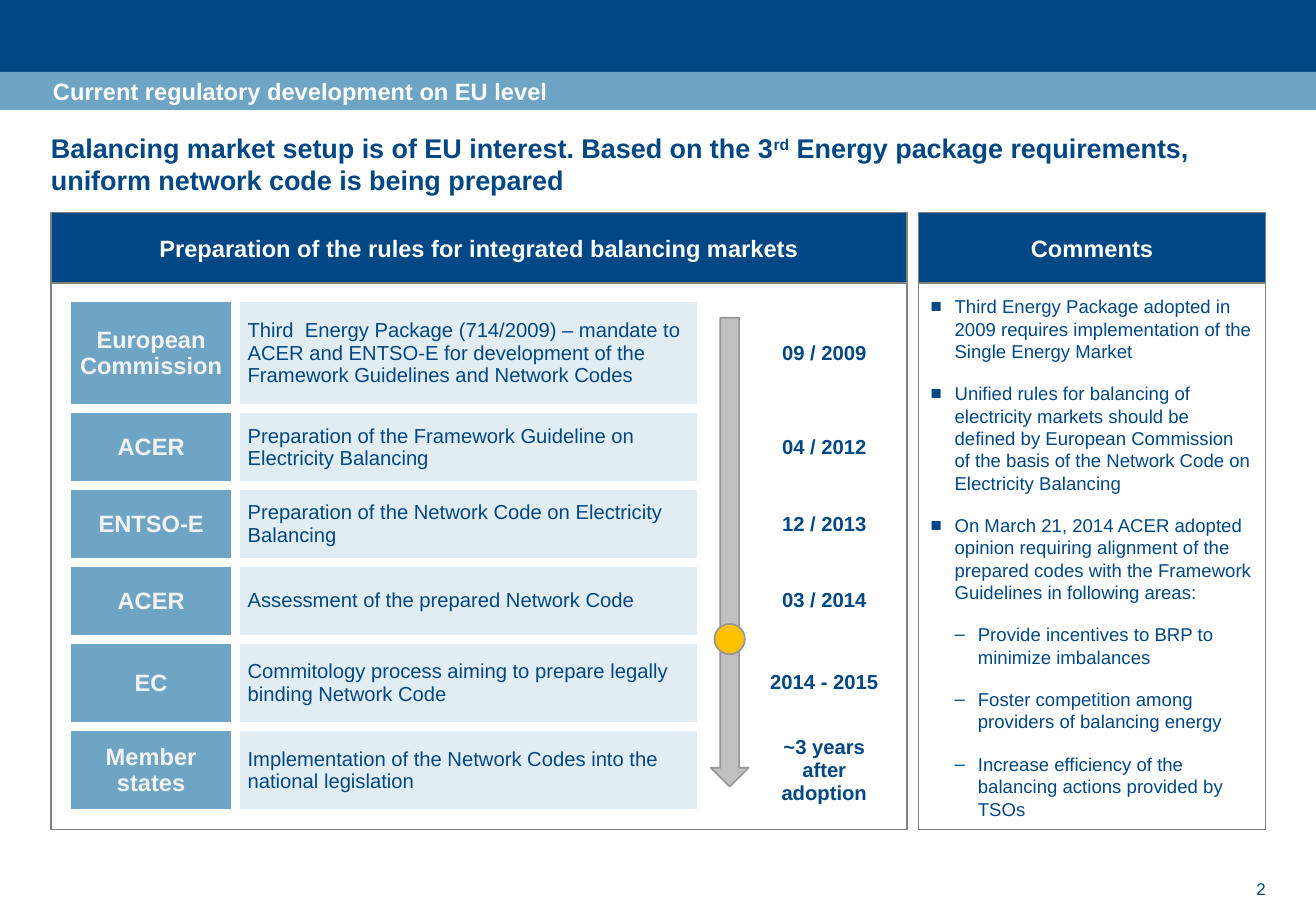
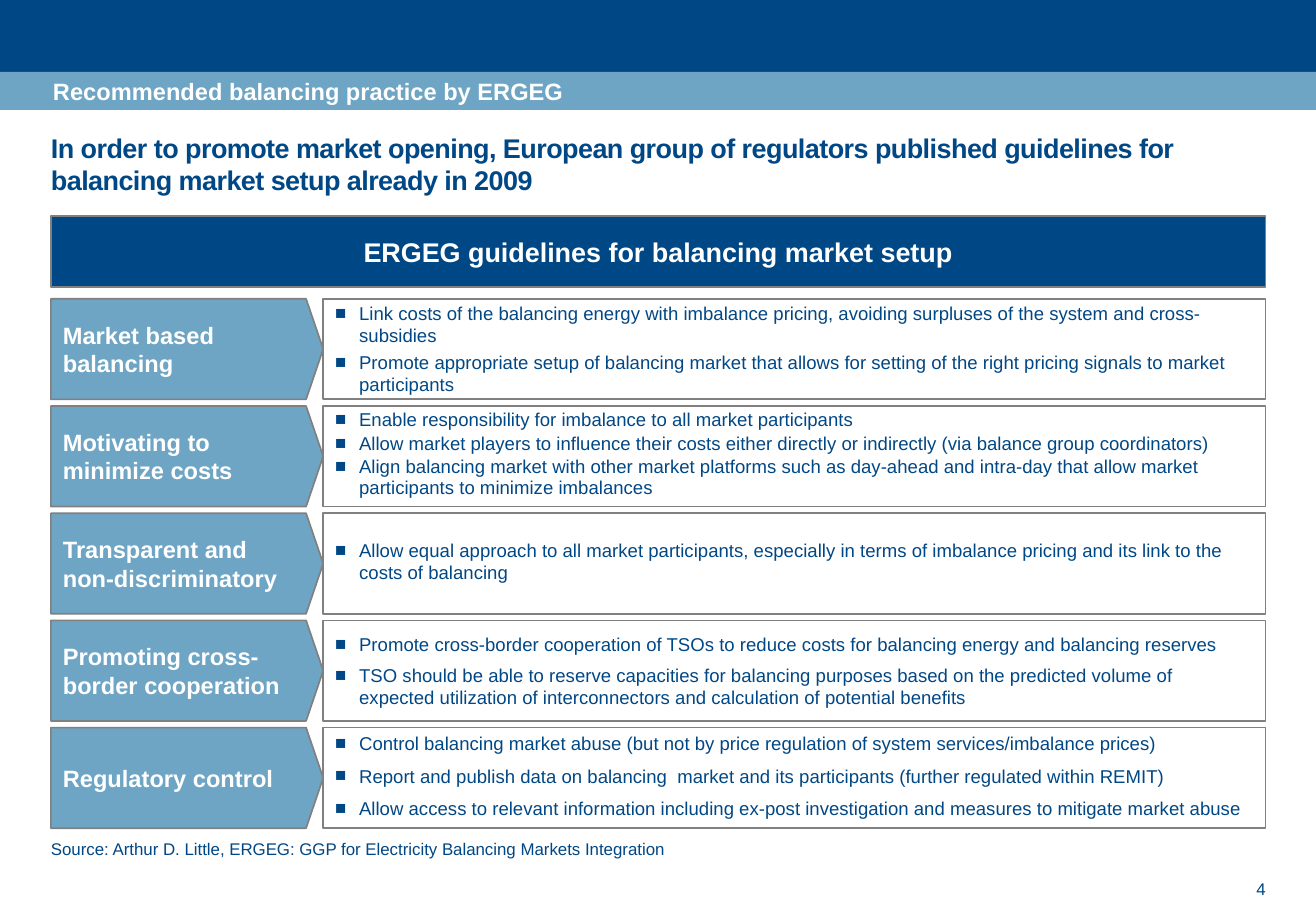
"""Build two slides on the regulation of electricity balancing markets."""
from dataclasses import dataclass
from typing import Optional

from lxml.etree import SubElement
from pptx import Presentation
from pptx.dml.color import RGBColor
from pptx.enum.shapes import MSO_SHAPE
from pptx.enum.text import MSO_ANCHOR, MSO_AUTO_SIZE, PP_ALIGN
from pptx.oxml import parse_xml
from pptx.oxml.ns import nsdecls, qn
from pptx.util import Pt


@dataclass(frozen=True)
class Theme:
    font: str = "Arial"
    navy: str = "004785"
    steel: str = "6EA5C4"
    pale: str = "E2EDF3"
    white: str = "FFFFFF"
    off_white: str = "F2F2F2"
    border: str = "808080"
    arrow_fill: str = "C0C0C0"
    arrow_line: str = "969696"
    marker: str = "FFC000"
    headline: int = 16
    heading: int = 14
    cell: int = 12
    bullet: int = 11
    small: int = 10


THEME = Theme()


@dataclass(frozen=True)
class Box:
    left: float
    top: float
    width: float
    height: float

    def lengths(self) -> tuple:
        return Pt(self.left), Pt(self.top), Pt(self.width), Pt(self.height)


@dataclass(frozen=True)
class Style:
    size: int
    color: str = THEME.navy
    bold: bool = False
    align: PP_ALIGN = PP_ALIGN.LEFT


@dataclass(frozen=True)
class Spacing:
    before: float = 0
    after: float = 0
    line: Optional[float] = None


@dataclass(frozen=True)
class Bullet:
    text: str
    level: int = 0


@dataclass(frozen=True)
class Milestone:
    body: str
    task: str
    date: str
    height: float


@dataclass(frozen=True)
class Guideline:
    name: str
    points: tuple
    spacing: Spacing
    top_inset: float = 4.5


LEFT, WIDTH, HEADER_HEIGHT = 30.2, 720, 41.8
HEADING = Style(THEME.heading, THEME.white, True, PP_ALIGN.CENTER)
LABEL = Style(THEME.heading, THEME.white, True)
BULLET = Style(THEME.bullet)
BULLET_MARKS = (("■", 14.2, -14.2), ("–", 28, -13.8))

MILESTONES = (
    Milestone("European Commission",
              "Third  Energy Package (714/2009) – mandate to ACER and ENTSO-E for "
              "development of the Framework Guidelines and Network Codes", "09 / 2009", 66.2),
    Milestone("ACER", "Preparation of the Framework Guideline on Electricity Balancing",
              "04 / 2012", 45.5),
    Milestone("ENTSO-E", "Preparation of the Network Code on Electricity Balancing",
              "12 / 2013", 45.5),
    Milestone("ACER", "Assessment of the prepared Network Code", "03 / 2014", 45.5),
    Milestone("EC", "Commitology process aiming to prepare legally binding Network Code",
              "2014 - 2015", 51.8),
    Milestone("Member states", "Implementation of the Network Codes into the national legislation",
              "~3 years after adoption", 51.8),
)

COMMENTS = (
    Bullet("Third Energy Package adopted in 2009 requires implementation of the Single Energy Market"),
    Bullet("Unified rules for balancing of electricity markets should be defined by European "
           "Commission of the basis of the Network Code on Electricity Balancing"),
    Bullet("On March 21, 2014 ACER adopted opinion requiring alignment of the prepared codes "
           "with the Framework Guidelines in following areas:"),
    Bullet("Provide incentives to BRP to minimize imbalances", 1),
    Bullet("Foster competition among providers of balancing energy", 1),
    Bullet("Increase efficiency of the balancing actions provided by TSOs", 1),
)

GUIDELINES = (
    Guideline("Market based balancing", (
        Bullet("Link costs of the balancing energy with imbalance pricing, avoiding surpluses "
               "of the system and cross-subsidies"),
        Bullet("Promote appropriate setup of balancing market that allows for setting of the "
               "right pricing signals to market participants"),
    ), Spacing(before=3, line=13), 7.2),
    Guideline("Motivating to minimize costs", (
        Bullet("Enable responsibility for imbalance to all market participants"),
        Bullet("Allow market players to influence their costs either directly or indirectly "
               "(via balance group coordinators)"),
        Bullet("Align balancing market with other market platforms such as day-ahead and "
               "intra-day that allow market participants to minimize imbalances"),
    ), Spacing(after=2, line=12)),
    Guideline("Transparent and non-discriminatory", (
        Bullet("Allow equal approach to all market participants, especially in terms of "
               "imbalance pricing and its link to the costs of balancing"),
    ), Spacing()),
    Guideline("Promoting cross-border cooperation", (
        Bullet("Promote cross-border cooperation of TSOs to reduce costs for balancing energy "
               "and balancing reserves"),
        Bullet("TSO should be able to reserve capacities for balancing purposes based on the "
               "predicted volume of expected utilization of interconnectors and calculation of "
               "potential benefits"),
    ), Spacing(before=5), 7.2),
    Guideline("Regulatory control", (
        Bullet("Control balancing market abuse (but not by price regulation of system "
               "services/imbalance prices)"),
        Bullet("Report and publish data on balancing  market and its participants (further "
               "regulated within REMIT)"),
        Bullet("Allow access to relevant information including ex-post investigation and "
               "measures to mitigate market abuse"),
    ), Spacing(after=6)),
)


def format_paragraph(paragraph, style: Style) -> None:
    paragraph.alignment = style.align
    for run in paragraph.runs:
        run.font.name = THEME.font
        run.font.size = Pt(style.size)
        run.font.bold = style.bold
        run.font.color.rgb = RGBColor.from_string(style.color)


def set_frame(text_frame, anchor=MSO_ANCHOR.TOP, insets=(0, 0, 0, 0), wrap: bool = True) -> None:
    text_frame.auto_size = MSO_AUTO_SIZE.NONE
    text_frame.word_wrap = wrap
    text_frame.vertical_anchor = anchor
    (text_frame.margin_left, text_frame.margin_top,
     text_frame.margin_right, text_frame.margin_bottom) = map(Pt, insets)


def place(shape, box: Box) -> None:
    shape.left, shape.top, shape.width, shape.height = box.lengths()


def outline(shape, color: str) -> None:
    shape.line.color.rgb = RGBColor.from_string(color)
    shape.line.width = Pt(1)


def add_box(slide, box: Box, fill: Optional[str] = None, line: Optional[str] = THEME.border,
            kind=MSO_SHAPE.RECTANGLE):
    shape = slide.shapes.add_shape(kind, *box.lengths())
    shape.shadow.inherit = False
    if fill:
        shape.fill.solid()
        shape.fill.fore_color.rgb = RGBColor.from_string(fill)
    else:
        shape.fill.background()
    if line:
        outline(shape, line)
    else:
        shape.line.fill.background()
    return shape


def add_label(slide, box: Box, text: str, style: Style, fill: str,
              kind=MSO_SHAPE.RECTANGLE, inset: float = 0):
    shape = add_box(slide, box, fill, kind=kind)
    set_frame(shape.text_frame, MSO_ANCHOR.MIDDLE, (inset,) * 4)
    shape.text_frame.text = text
    format_paragraph(shape.text_frame.paragraphs[0], style)
    return shape


def write_bullets(text_frame, bullets: tuple, spacing: Spacing) -> None:
    for index, bullet in enumerate(bullets):
        paragraph = text_frame.add_paragraph() if index else text_frame.paragraphs[0]
        paragraph.text = bullet.text
        paragraph.level = bullet.level
        paragraph.space_before = Pt(spacing.before if index else 0)
        paragraph.space_after = Pt(spacing.after)
        if spacing.line:
            paragraph.line_spacing = Pt(spacing.line)
        mark, margin, indent = BULLET_MARKS[bullet.level]
        properties = paragraph._p.get_or_add_pPr()
        properties.set("marL", str(Pt(margin)))
        properties.set("indent", str(Pt(indent)))
        SubElement(SubElement(properties, qn("a:buClr")), qn("a:srgbClr")).set("val", THEME.navy)
        SubElement(properties, qn("a:buFont")).set("typeface", THEME.font)
        SubElement(properties, qn("a:buChar")).set("char", mark)
        format_paragraph(paragraph, BULLET)


def write_plain_line(placeholder, box: Box, text: str, style: Style, anchor, insets) -> None:
    place(placeholder, box)
    set_frame(placeholder.text_frame, anchor, insets)
    placeholder.text_frame.text = text
    paragraph = placeholder.text_frame.paragraphs[0]
    paragraph.space_before = Pt(0)
    properties = paragraph._p.get_or_add_pPr()
    properties.set("marL", "0")
    properties.set("indent", "0")
    SubElement(properties, qn("a:buNone"))
    format_paragraph(paragraph, style)


def add_layout_bands(layout, slide) -> None:
    bands = ((Box(0, 0, 780, 44.6), THEME.navy), (Box(0, 42.7, 780, 22.5), THEME.steel))
    for index, (box, color) in enumerate(bands):
        element = add_box(slide, box, color, line=None)._element
        element.nvSpPr.cNvPr.set("id", str(100 + index))
        layout.shapes._spTree.insert(2 + index, element)


def start_slide(presentation, layout, topic: str, headline: tuple, number: str,
                letter_spacing: int = 0):
    slide = presentation.slides.add_slide(layout)
    title = slide.shapes.title
    place(title, Box(LEFT, 77.8, WIDTH, 39))
    set_frame(title.text_frame)
    paragraph = title.text_frame.paragraphs[0]
    for index, text in enumerate(headline):
        run = paragraph.add_run()
        run.text = text
        properties = run._r.get_or_add_rPr()
        if index % 2:
            properties.set("baseline", "30000")
        if letter_spacing:
            properties.set("spc", str(letter_spacing))
    format_paragraph(paragraph, Style(THEME.headline, bold=True))
    write_plain_line(slide.placeholders[1], Box(0, 42.7, 750, 22.5), topic, LABEL,
                     MSO_ANCHOR.MIDDLE, (31.4, 0, 0, 0))
    page = slide.shapes.add_textbox(*Box(723.6, 514, 26.6, 18.7).lengths())
    set_frame(page.text_frame, MSO_ANCHOR.BOTTOM, wrap=False)
    page.text_frame.text = number
    format_paragraph(page.text_frame.paragraphs[0], Style(THEME.small, align=PP_ALIGN.RIGHT))
    return slide


def format_cell(cell, text: str, style: Style, fill: str) -> None:
    cell.fill.solid()
    cell.fill.fore_color.rgb = RGBColor.from_string(fill)
    cell.vertical_anchor = MSO_ANCHOR.MIDDLE
    cell.text_frame.text = text
    format_paragraph(cell.text_frame.paragraphs[0], style)
    for index, side in enumerate(("lnL", "lnR", "lnT", "lnB")):
        cell._tc.get_or_add_tcPr().insert(index, parse_xml(
            f'<a:{side} {nsdecls("a")} w="{Pt(6)}"><a:solidFill>'
            f'<a:srgbClr val="{THEME.white}"/></a:solidFill></a:{side}>'))


def add_milestone_table(slide) -> None:
    widths = (100, 276, 28, 90)
    heights = [milestone.height for milestone in MILESTONES]
    box = Box(39.6, 176.2, sum(widths), sum(heights))
    table = slide.shapes.add_table(len(heights), len(widths), *box.lengths()).table
    table.first_row = table.horz_banding = False
    for column, width in zip(table.columns, widths):
        column.width = Pt(width)
    styles = (Style(THEME.heading, THEME.off_white, True, PP_ALIGN.CENTER), Style(THEME.cell),
              Style(THEME.cell), Style(THEME.cell, bold=True, align=PP_ALIGN.CENTER))
    fills = (THEME.steel, THEME.pale, THEME.white, THEME.white)
    for row, milestone in zip(table.rows, MILESTONES):
        row.height = Pt(milestone.height)
        texts = (milestone.body, milestone.task, "", milestone.date)
        for cell, text, style, fill in zip(row.cells, texts, styles, fills):
            format_cell(cell, text, style, fill)


def fill_development_slide(slide) -> None:
    top, body_height, comments_left = 126, 324, 544.4
    process_width, comments_width = 507.6, LEFT + WIDTH - comments_left
    body_top = top + HEADER_HEIGHT
    add_box(slide, Box(LEFT, body_top, process_width, body_height))
    comments = slide.placeholders[2]
    place(comments, Box(comments_left, body_top, comments_width, body_height))
    outline(comments, THEME.border)
    set_frame(comments.text_frame, insets=(7.2,) * 4)
    write_bullets(comments.text_frame, COMMENTS, Spacing(before=12))
    for left, width, text in (
            (LEFT, process_width, "Preparation of the rules for integrated balancing markets"),
            (comments_left, comments_width, "Comments")):
        add_label(slide, Box(left, top, width, HEADER_HEIGHT), text, HEADING, THEME.navy)
    add_milestone_table(slide)
    add_box(slide, Box(421.3, 188.4, 22.4, 277.9), THEME.arrow_fill, THEME.arrow_line,
            MSO_SHAPE.DOWN_ARROW)
    add_box(slide, Box(423.5, 369.8, 18, 18), THEME.marker, THEME.arrow_line, MSO_SHAPE.OVAL)


def fill_guideline_slide(slide) -> None:
    write_plain_line(slide.placeholders[2], Box(LEFT, 496.8, WIDTH, 12.4),
                     "Source: Arthur D. Little, ERGEG: GGP for Electricity Balancing Markets Integration",
                     Style(THEME.small), MSO_ANCHOR.TOP, (0, 0, 0, 0))
    add_label(slide, Box(LEFT, 128.2, WIDTH, HEADER_HEIGHT),
              "ERGEG guidelines for balancing market setup",
              Style(THEME.headline, THEME.white, True, PP_ALIGN.CENTER), THEME.navy)
    first_top, pitch, height, name_width = 177.1, 63.55, 59.6, 161.4
    for index, guideline in enumerate(GUIDELINES):
        top = first_top + index * pitch
        name = add_label(slide, Box(LEFT, top, name_width, height), guideline.name, LABEL,
                         THEME.steel, MSO_SHAPE.PENTAGON, 7.2)
        name.adjustments[0] = 0.17
        points = add_box(slide, Box(LEFT + name_width, top, WIDTH - name_width, height))
        set_frame(points.text_frame, MSO_ANCHOR.MIDDLE, (7.2, guideline.top_inset, 7.2, 7.2))
        write_bullets(points.text_frame, guideline.points, guideline.spacing)


def main() -> None:
    presentation = Presentation()
    presentation.slide_width, presentation.slide_height = Pt(780), Pt(540)
    layout = presentation.slide_layouts.get_by_name("Two Content")
    development = start_slide(
        presentation, layout, "Current regulatory development on EU level",
        ("Balancing market setup is of EU interest. Based on the 3", "rd",
         " Energy package requirements, uniform network code is being prepared"), "2")
    add_layout_bands(layout, development)
    fill_development_slide(development)
    practice = start_slide(
        presentation, layout, "Recommended balancing practice by ERGEG",
        ("In order to promote market opening, European group of regulators published "
         "guidelines for balancing market setup already in 2009",), "4", letter_spacing=-30)
    fill_guideline_slide(practice)
    presentation.save("out.pptx")


if __name__ == "__main__":
    main()
